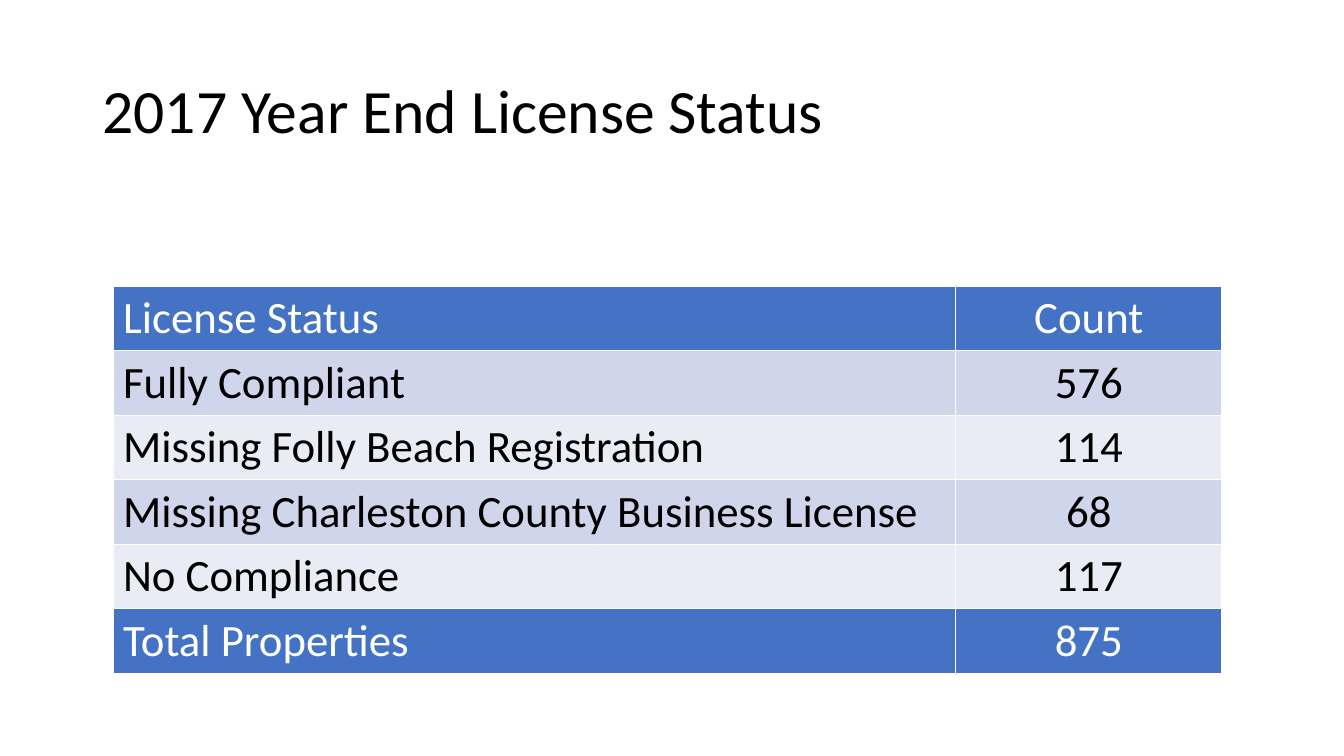
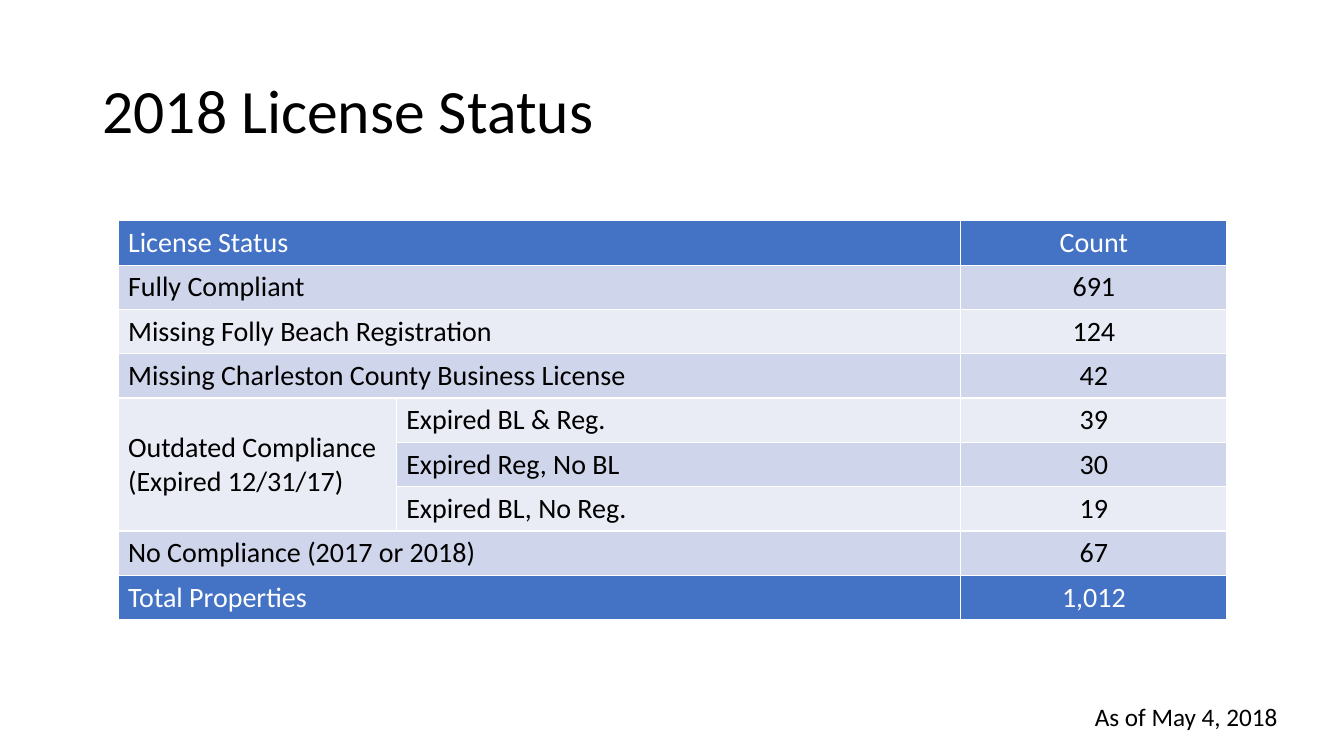
from lxml import etree
from pptx import Presentation
from pptx.dml.color import RGBColor
from pptx.enum.text import MSO_ANCHOR, PP_ALIGN
from pptx.oxml.ns import qn
from pptx.util import Inches, Pt

MIDDLE, TOP = MSO_ANCHOR.MIDDLE, MSO_ANCHOR.TOP
LEFT, CENTER = PP_ALIGN.LEFT, PP_ALIGN.CENTER

FONT = "Calibri"
BLACK = RGBColor(0x00, 0x00, 0x00)
WHITE = RGBColor(0xFF, 0xFF, 0xFF)
BLUE = RGBColor(0x44, 0x72, 0xC4)
BANDS = (RGBColor(0xE9, 0xEB, 0xF5), RGBColor(0xCF, 0xD5, 0xEA))

TITLE_BOX = (0.92, 0.4, 11.5, 1.45)
NOTE_BOX = (10.76, 6.91, 2.14, 0.4)

# Content: None joins a cell to the one above (first column) or to its left
SLIDES = [
    {
        "title": "2017 Year End License Status",
        "at": (1.12, 2.84), "cols": (8.36, 2.64), "row": 0.64, "size": 32,
        "rows": [
            ("License Status", "Count"),
            ("Fully Compliant", "576"),
            ("Missing Folly Beach Registration", "114"),
            ("Missing Charleston County Business License", "68"),
            ("No Compliance", "117"),
            ("Total Properties", "875"),
        ],
    },
    {
        "title": "2018 License Status",
        "at": (1.17, 2.19), "cols": (2.76, 5.6, 2.64), "row": 0.44, "size": 20,
        "rows": [
            ("License Status", None, "Count"),
            ("Fully Compliant", None, "691"),
            ("Missing Folly Beach Registration", None, "124"),
            ("Missing Charleston County Business License", None, "42"),
            ("Outdated Compliance\n(Expired 12/31/17)", "Expired BL & Reg.", "39"),
            (None, "Expired Reg, No BL", "30"),
            (None, "Expired BL, No Reg.", "19"),
            ("No Compliance (2017 or 2018)", None, "67"),
            ("Total Properties", None, "1,012"),
        ],
        "note": "As of May 4, 2018",
    },
]


def write(tf, text, size, color, align=LEFT, spacing=None):
    for i, line in enumerate(text.split("\n")):
        p = tf.paragraphs[0] if i == 0 else tf.add_paragraph()
        p.alignment = align
        if spacing:
            p.line_spacing = spacing
        r = p.add_run()
        r.text = line
        r.font.name, r.font.size, r.font.bold = FONT, Pt(size), False
        r.font.color.rgb = color


def add_text(s, box, text, size, anchor, spacing=None):
    tf = s.shapes.add_textbox(*map(Inches, box)).text_frame
    tf.word_wrap = True
    tf.vertical_anchor = anchor
    write(tf, text, size, BLACK, spacing=spacing)


def style_cell(cell, fill):
    tc_pr = cell._tc.get_or_add_tcPr()
    for side in ("a:lnL", "a:lnR", "a:lnT", "a:lnB"):
        ln = etree.SubElement(tc_pr, qn(side), w=str(Pt(1)))
        solid = etree.SubElement(ln, qn("a:solidFill"))
        etree.SubElement(solid, qn("a:srgbClr"), val=str(WHITE))
    cell.fill.solid()
    cell.fill.fore_color.rgb = fill
    cell.vertical_anchor = MIDDLE


def merge_end(rows, i, j):
    """Last row and column that the cell at row i, column j covers."""
    last_row, last_col = i, j
    while last_col + 1 < len(rows[i]) and rows[i][last_col + 1] is None:
        last_col += 1
    while j == 0 and last_row + 1 < len(rows) and rows[last_row + 1][0] is None:
        last_row += 1
    return last_row, last_col


def add_status_table(s, at, cols, row, size, rows):
    box = (*at, sum(cols), row * len(rows))
    table = s.shapes.add_table(len(rows), len(cols), *map(Inches, box)).table
    table.first_row = table.horz_banding = False
    for column, width in zip(table.columns, cols):
        column.width = Inches(width)
    for i, values in enumerate(rows):
        table.rows[i].height = Inches(row)
        strong = i in (0, len(rows) - 1)
        for j, text in enumerate(values):
            cell = table.cell(i, j)
            style_cell(cell, BLUE if strong else BANDS[i % 2])
            if text is None:
                continue
            end = merge_end(rows, i, j)
            if end != (i, j):
                cell.merge(table.cell(*end))
            write(cell.text_frame, text, size, WHITE if strong else BLACK,
                  CENTER if j == len(cols) - 1 else LEFT)


def main():
    prs = Presentation()
    prs.slide_width, prs.slide_height = Inches(13.33), Inches(7.5)
    for data in SLIDES:
        s = prs.slides.add_slide(prs.slide_layouts[6])
        add_text(s, TITLE_BOX, data["title"], 44, MIDDLE, spacing=0.9)
        add_status_table(s, data["at"], data["cols"], data["row"],
                         data["size"], data["rows"])
        if "note" in data:
            add_text(s, NOTE_BOX, data["note"], 18, TOP)
    prs.save("out.pptx")


if __name__ == "__main__":
    main()
